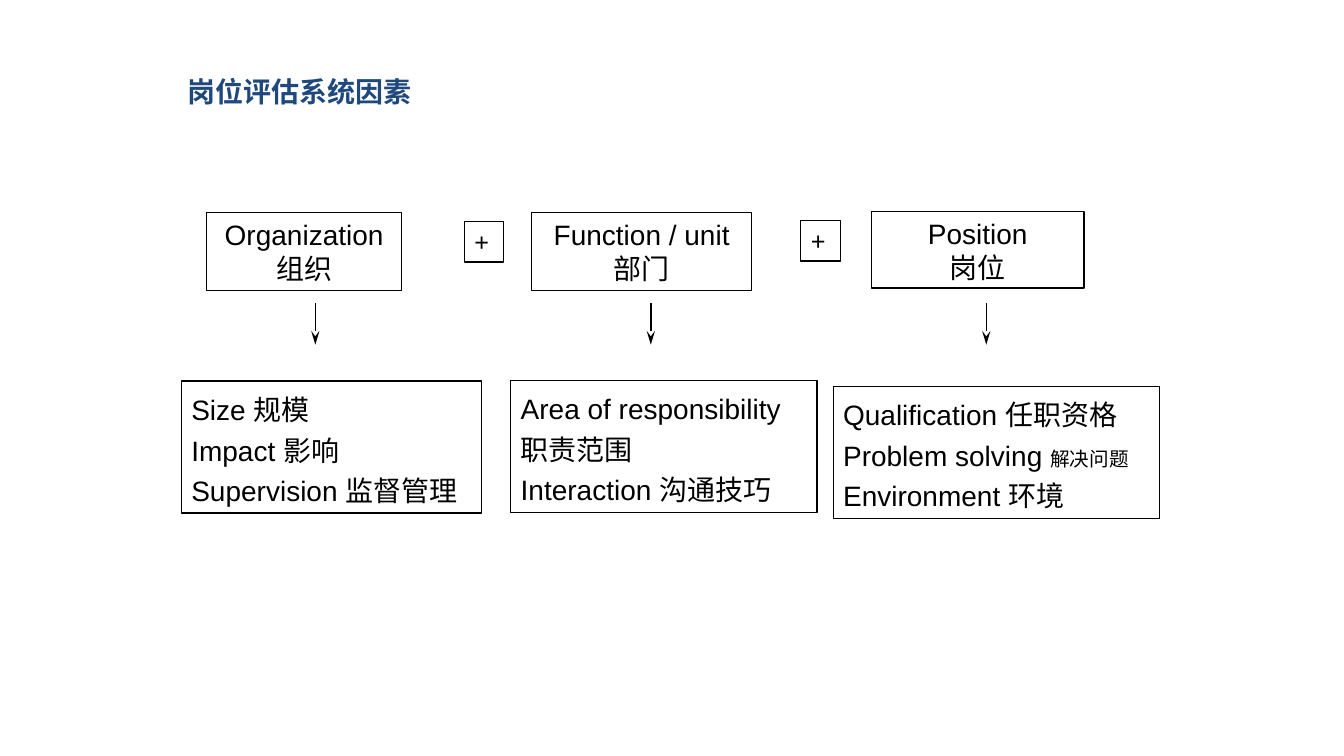
from lxml import etree
from pptx import Presentation
from pptx.dml.color import RGBColor
from pptx.enum.shapes import MSO_CONNECTOR, MSO_SHAPE
from pptx.enum.text import MSO_ANCHOR, PP_ALIGN
from pptx.oxml.ns import qn
from pptx.util import Pt

PX = 9144  # 100 px to the inch
RECT = MSO_SHAPE.RECTANGLE
LINE = MSO_CONNECTOR.STRAIGHT
TOP = MSO_ANCHOR.TOP
LEFT, MID = PP_ALIGN.LEFT, PP_ALIGN.CENTER
LATIN, HAN = "Arial", "Noto Sans CJK SC"
COLORS = {"ink": "000000", "title": "1F497D"}

# Place, line width, lines of text
HEADS = [
    ((205, 211, 194, 77), 0.75, ["Organization", "组织"]),
    ((528, 211, 218, 77), 0.75, ["Function / unit", "部门"]),
    ((865, 210, 211, 76), 1, ["Position", "岗位"]),
]
PLUSES = [(461, 220, 39, 40), (795, 219, 39, 40)]
# Place, then lines made of (text, size) runs
LISTS = [
    ((180, 378, 298, 131), [[("Size 规模", 20)],
                            [("Impact 影响", 20)],
                            [("Supervision 监督管理", 20)]]),
    ((507, 377, 304, 131), [[("Area of responsibility", 20)],
                            [("职责范围", 20)],
                            [("Interaction 沟通技巧", 20)]]),
    ((827, 383, 324, 131), [[("Qualification 任职资格", 20)],
                            [("Problem solving ", 20), ("解决问题", 14)],
                            [("Environment 环境", 20)]]),
]


def color(name):
    return RGBColor.from_string(COLORS[name])


def add_run(para, text, size=20, ink="ink", face=LATIN, bold=False):
    run = para.add_run()
    run.text = text
    font = run.font
    font.size, font.name, font.bold = Pt(size), face, bold
    font.color.rgb = color(ink)
    east = etree.SubElement(run._r.get_or_add_rPr(), qn("a:ea"))
    east.set("typeface", HAN)


def add_para(frame, first, align=LEFT):
    para = frame.paragraphs[0] if first else frame.add_paragraph()
    para.alignment = align
    return para


def add_box(slide, place, width=0.75):
    """Draw an outlined box and return its text frame."""
    box = slide.shapes.add_shape(RECT, *(n * PX for n in place))
    box.shadow.inherit = False
    box.fill.background()
    box.line.color.rgb = color("ink")
    box.line.width = Pt(width)
    frame = box.text_frame
    frame.word_wrap = True
    frame.vertical_anchor = TOP
    return frame


def add_head(slide, place, width, lines):
    frame = add_box(slide, place, width)
    for i, text in enumerate(lines):
        add_run(add_para(frame, i == 0, MID), text)


def add_list(slide, place, rows):
    frame = add_box(slide, place)
    for i, runs in enumerate(rows):
        para = add_para(frame, i == 0)
        para.line_spacing = 1.2
        for text, size in runs:
            add_run(para, text, size)


def add_arrow(slide, x, top, end):
    arrow = slide.shapes.add_connector(LINE, x * PX, top * PX, x * PX, end * PX)
    arrow.line.color.rgb = color("ink")
    arrow.line.width = Pt(1)
    tip = etree.SubElement(arrow.line._get_or_add_ln(), qn("a:tailEnd"))
    tip.set("type", "stealth")
    tip.set("len", "lg")
    etree.SubElement(arrow._element.spPr, qn("a:effectLst"))


def set_title(slide, text):
    title = slide.shapes.title
    title.left, title.top = 176 * PX, 69 * PX
    title.width, title.height = 396 * PX, 54 * PX
    frame = title.text_frame
    frame.vertical_anchor = TOP
    add_run(add_para(frame, True), text, 20, "title", HAN, True)


def main():
    deck = Presentation()
    deck.slide_width, deck.slide_height = 1334 * PX, 750 * PX
    slide = deck.slides.add_slide(deck.slide_layouts[5])
    set_title(slide, "岗位评估系统因素")
    for place, width, lines in HEADS:
        add_head(slide, place, width, lines)
    for place in PLUSES:
        add_run(add_para(add_box(slide, place), True), "+", 18)
    for i in range(3):
        add_arrow(slide, 313 + 333 * i, 301, 342)
    for place, rows in LISTS:
        add_list(slide, place, rows)
    deck.save("out.pptx")


if __name__ == "__main__":
    main()
